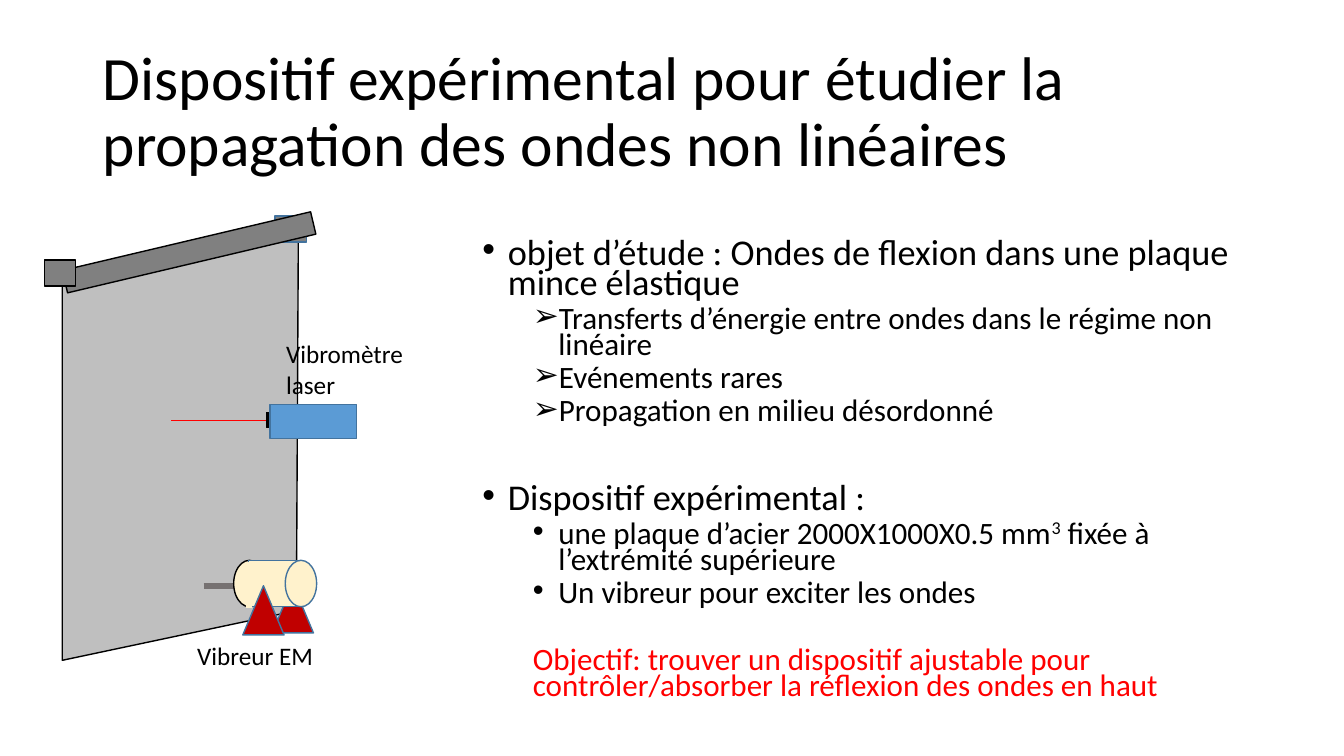
from dataclasses import dataclass

from lxml.etree import SubElement
from pptx import Presentation
from pptx.dml.color import RGBColor
from pptx.enum.shapes import MSO_CONNECTOR as Connector, MSO_SHAPE as Shape
from pptx.enum.text import MSO_ANCHOR as Anchor
from pptx.oxml.ns import qn
from pptx.util import Cm, Pt


@dataclass(frozen=True)
class Theme:
    font: str = "Calibri"
    black: str = "000000"
    red: str = "FF0000"
    plate: str = "BFBFBF"
    steel: str = "808080"
    shaft: str = "767171"
    cream: str = "FFF2CC"
    support: str = "C00000"
    laser: str = "5B9BD5"
    outline: str = "43739E"
    title_size: float = 44
    topic_size: float = 25.9
    detail_size: float = 22.2
    label_size: float = 18


THEME = Theme()
CLAMP = (0.79, 0.66)
SUPPORT = (1.04, 1.24)
BARREL_END = (0.79, 1.17)


@dataclass(frozen=True)
class Item:
    text: str
    level: int = 1
    bullet: str = ""
    before: float = 5
    color: str = THEME.black
    superscript: str = ""
    tail: str = ""


ITEMS = (
    Item("objet d’étude : Ondes de flexion dans une plaque mince élastique", 0, "•", 0),
    Item("Transferts d’énergie entre ondes dans le régime non linéaire", bullet="➢"),
    Item("Evénements rares", bullet="➢"),
    Item("Propagation en milieu désordonné", bullet="➢"),
    Item("Dispositif expérimental :", 0, "•", 42),
    Item("une plaque d’acier 2000X1000X0.5 mm", bullet="•",
         superscript="3", tail=" fixée à l’extrémité supérieure"),
    Item("Un vibreur pour exciter les ondes", bullet="•"),
    Item("Objectif: trouver un dispositif ajustable pour contrôler/absorber "
         "la réflexion des ondes en haut", before=29, color=THEME.red),
)


def rgb(color):
    return RGBColor.from_string(color)


def paint(shape, fill, line):
    shape.shadow.inherit = False
    shape.fill.solid()
    shape.fill.fore_color.rgb = rgb(fill)
    shape.line.color.rgb = rgb(line)
    shape.line.width = Pt(1)


def style_font(font, size, color=THEME.black):
    font.name = THEME.font
    font.size = Pt(size)
    font.color.rgb = rgb(color)


def add_part(shapes, kind, left, top, size, fill, line=THEME.outline):
    part = shapes.add_shape(kind, Cm(left), Cm(top), *map(Cm, size))
    paint(part, fill, line)
    return part


def add_outline(shapes, points, fill, line):
    start, *others = [(Cm(x), Cm(y)) for x, y in points]
    builder = shapes.build_freeform(*start)
    builder.add_line_segments(others, close=True)
    paint(builder.convert_to_shape(), fill, line)


def add_line(shapes, start, end, color, width):
    line = shapes.add_connector(Connector.STRAIGHT, *map(Cm, start + end))
    line.line.color.rgb = rgb(color)
    line.line.width = Pt(width)
    SubElement(line._element.spPr, qn("a:effectLst"))
    return line


def add_text(shapes, left, top, width, height, text, size, wrap=True):
    box = shapes.add_textbox(Cm(left), Cm(top), Cm(width), Cm(height))
    box.text_frame.word_wrap = wrap
    box.text_frame.text = text
    for para in box.text_frame.paragraphs:
        style_font(para.font, size)
    return box


def set_bullet(para, level, bullet):
    """Set the indents, and the bullet if there is one."""
    hanging = Cm(0.64) if bullet else 0
    properties = para._p.get_or_add_pPr()
    properties.set("marL", str(Cm(1.27) * level + hanging))
    properties.set("indent", str(-hanging))
    if bullet:
        SubElement(properties, qn("a:buFont"), typeface="Arial")
        SubElement(properties, qn("a:buChar"), char=bullet)
    else:
        SubElement(properties, qn("a:buNone"))


def add_title(shapes):
    title = add_text(shapes, 2.34, 1.02, 29.21, 3.68,
                     "Dispositif expérimental pour étudier la propagation "
                     "des ondes non linéaires", THEME.title_size)
    title.text_frame.vertical_anchor = Anchor.MIDDLE
    title.text_frame.paragraphs[0].line_spacing = 0.9


def add_items(shapes):
    box = shapes.add_textbox(Cm(11.91), Cm(5.94), Cm(19.63), Cm(12.34))
    frame = box.text_frame
    frame.word_wrap = True
    for index, item in enumerate(ITEMS):
        para = frame.add_paragraph() if index else frame.paragraphs[0]
        para.level = item.level
        para.line_spacing = 0.7
        para.space_before = Pt(item.before)
        set_bullet(para, item.level, item.bullet)
        size = THEME.detail_size if item.level else THEME.topic_size
        for text in filter(None, (item.text, item.superscript, item.tail)):
            span = para.add_run()
            span.text = text
            style_font(span.font, size, item.color)
            if text == item.superscript:
                span.font._element.set("baseline", "30000")


def add_plate_and_shaker(shapes):
    corners = ((1.57, 7.01), (7.52, 5.82), (7.47, 15.39), (1.57, 16.64))
    add_outline(shapes, corners, THEME.plate, THEME.black)
    add_part(shapes, Shape.ISOSCELES_TRIANGLE, 6.86, 14.71, SUPPORT, THEME.support)

    add_part(shapes, Shape.RECTANGLE, 6.93, 5.44, CLAMP, THEME.steel)
    rail = add_part(shapes, Shape.RECTANGLE, 1.55, 6.07, (6.43, 0.58),
                    THEME.steel, THEME.black)
    rail.rotation = 346.7
    add_part(shapes, Shape.RECTANGLE, 1.12, 6.55, CLAMP, THEME.steel, THEME.black)

    add_line(shapes, (5.13, 14.76), (6.68, 14.76), THEME.shaft, 4.5)
    add_part(shapes, Shape.OVAL, 5.89, 14.12, BARREL_END, THEME.cream, THEME.black)
    add_part(shapes, Shape.RECTANGLE, 6.27, 14.12, (1.32, 1.17), THEME.cream)
    add_part(shapes, Shape.OVAL, 7.19, 14.12, BARREL_END, THEME.cream)
    add_line(shapes, (6.27, 14.17), (6.27, 15.32), THEME.cream, 4.5)
    add_part(shapes, Shape.ISOSCELES_TRIANGLE, 6.12, 14.76, SUPPORT, THEME.support)
    add_text(shapes, 4.72, 16, 3.45, 1.02, "Vibreur EM", THEME.label_size, wrap=False)


def add_vibrometer(shapes):
    lens = add_part(shapes, Shape.RECTANGLE, 6.71, 10.39, (0.28, 0.38),
                    THEME.black, THEME.black)
    add_part(shapes, Shape.RECTANGLE, 6.81, 10.19, (2.18, 0.86), THEME.laser)
    beam = add_line(shapes, (6.71, 10.58), (4.32, 10.58), THEME.red, 0.5)
    beam.begin_connect(lens, 1)
    add_text(shapes, 6.96, 8.41, 3.81, 1.8, "Vibromètre\nlaser", THEME.label_size)


def main():
    deck = Presentation()
    deck.slide_width, deck.slide_height = Cm(33.87), Cm(19.05)
    page = deck.slides.add_slide(deck.slide_layouts[6])
    add_title(page.shapes)
    add_items(page.shapes)
    add_plate_and_shaker(page.shapes.add_group_shape().shapes)
    add_vibrometer(page.shapes)
    deck.save("out.pptx")


if __name__ == "__main__":
    main()
